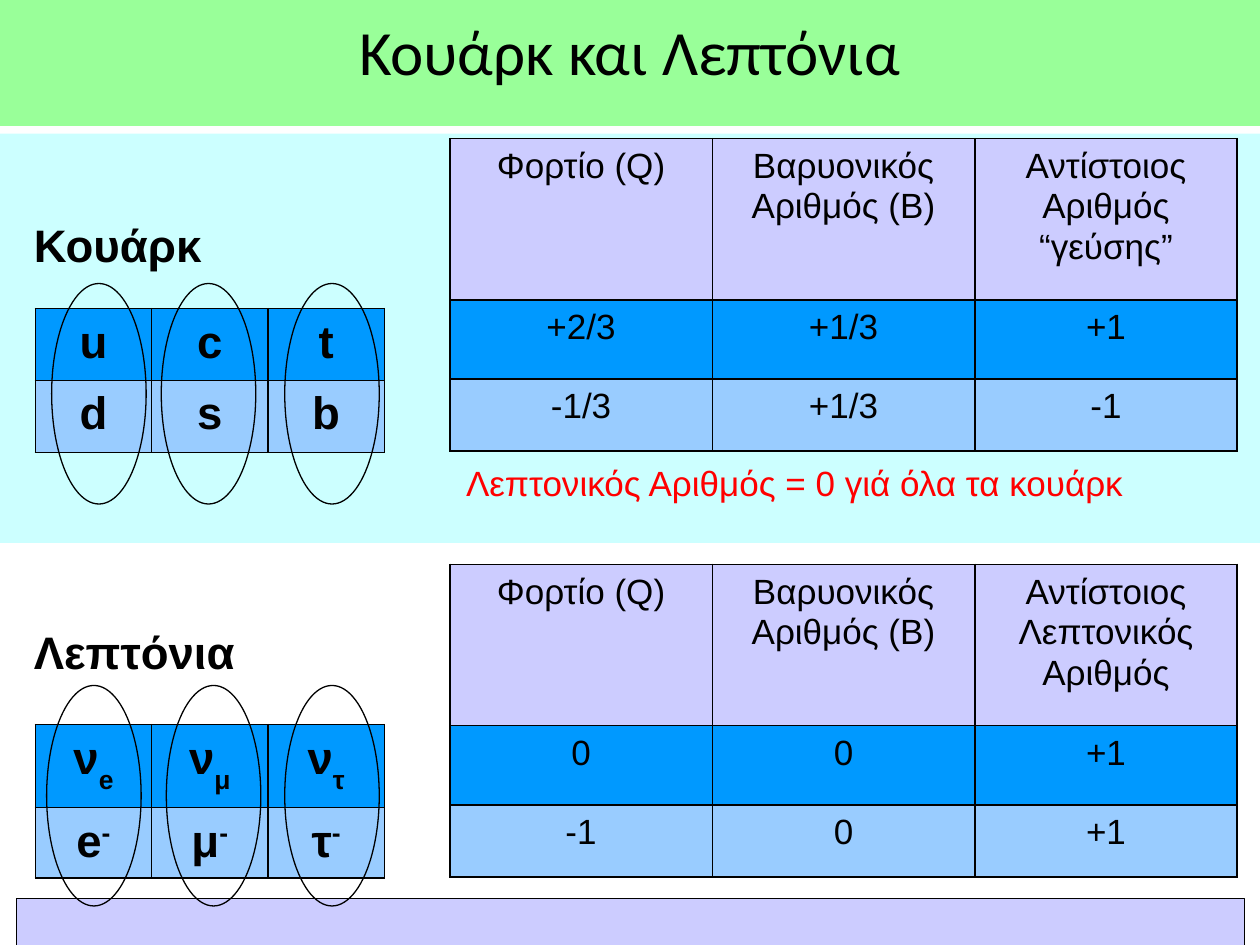
from lxml.etree import SubElement
from pptx import Presentation
from pptx.dml.color import RGBColor
from pptx.enum.shapes import MSO_SHAPE
from pptx.enum.text import MSO_ANCHOR, PP_ALIGN
from pptx.oxml.ns import qn
from pptx.util import Inches, Pt

COLUMNS, ROWS = 100, 75
CELL = Inches(0.1)
BLACK, RED, LILAC, CYAN, GREEN = "000000", "FF0000", "CCCCFF", "CCFFFF", "99FF99"
ROW_FILLS = ["0099FF", "99CCFF"]
SYMBOL = {"name": "Arial", "size": Pt(26), "bold": True}
BODY = {"name": "Arial", "size": Pt(20), "bold": False}
TITLE = {"name": "Calibri", "size": Pt(36), "bold": False}
PROPERTY_HEADS = ["Φορτίο (Q)", "Βαρυονικός Αριθμός (Β)"]

QUARKS = {
    "label": "Κουάρκ", "label_row": 6.1,
    "family": ["uct", "dsb"], "family_row": 13.9, "family_heights": [5.7, 5.7],
    "heads": PROPERTY_HEADS + ["Αντίστοιος Αριθμός “γεύσης”"],
    "values": [["+2/3", "+1/3", "+1"], ["-1/3", "+1/3", "-1"]],
    "ring_row": 11.9, "ring_columns": [4.1, 12.8, 22.6],
}
LEPTONS = {
    "label": "Λεπτόνια", "label_row": 4.6,
    "family": [["νe", "νμ", "ντ"], ["e-", "μ-", "τ-"]],
    "family_row": 13.1, "family_heights": [6.6, 5.6],
    "heads": PROPERTY_HEADS + ["Αντίστοιος Λεπτονικός Αριθμός"],
    "values": [["0", "0", "+1"], ["-1", "0", "+1"]],
    "ring_row": 10, "ring_columns": [3.7, 13.2, 22.6],
}


def color(value):
    """Return the colour for a hex string."""
    return RGBColor.from_string(value)


def grid(*cells):
    """Turn grid columns and rows into lengths."""
    return [int(cell * CELL) for cell in cells]


def add_run(paragraph, text, font_format, fill=BLACK, baseline=0):
    """Add one formatted run, raised or lowered by the baseline share."""
    run = paragraph.add_run()
    run.text = text
    for name, value in font_format.items():
        setattr(run.font, name, value)
    run.font.color.rgb = color(fill)
    if baseline:
        run.font._element.set("baseline", str(baseline))


def add_panel(slide, box, kind=MSO_SHAPE.RECTANGLE, fill=None, line=None):
    """Add a preset shape with an optional fill and thin outline."""
    shape = slide.shapes.add_shape(kind, *grid(*box))
    shape.shadow.inherit = False
    if fill:
        shape.fill.solid()
        shape.fill.fore_color.rgb = color(fill)
    else:
        shape.fill.background()
    if line:
        shape.line.color.rgb = color(line)
        shape.line.width = Pt(0.75)
    else:
        shape.line.fill.background()
    return shape


def add_label(slide, box, text, font_format, fill=BLACK):
    """Add a wrapped, left-aligned line of text."""
    frame = slide.shapes.add_textbox(*grid(*box)).text_frame
    frame.word_wrap = True
    add_run(frame.paragraphs[0], text, font_format, fill)


def add_borders(cell):
    """Draw black lines on the four sides of a cell, ahead of its fill."""
    properties = cell._tc.get_or_add_tcPr()
    for position, side in enumerate(["lnL", "lnR", "lnT", "lnB"]):
        line = SubElement(properties, qn(f"a:{side}"), w=str(Pt(1)))
        fill = SubElement(line, qn("a:solidFill"))
        SubElement(fill, qn("a:srgbClr"), val=BLACK)
        properties.insert(position, line)


def add_grid_table(slide, box, heights, texts, fills, font_format):
    """Add a table of equal columns; a second letter in a symbol is an index."""
    left, top, width = box
    count = len(texts[0])
    frame = slide.shapes.add_table(
        len(texts), count, *grid(left, top, width, sum(heights)))
    table = frame.table
    for column in table.columns:
        column.width = grid(width / count)[0]
    for row, height, row_texts, fill in zip(table.rows, heights, texts, fills):
        row.height = grid(height)[0]
        for cell, text in zip(row.cells, row_texts):
            cell.fill.solid()
            cell.fill.fore_color.rgb = color(fill)
            add_borders(cell)
            paragraph = cell.text_frame.paragraphs[0]
            paragraph.alignment = PP_ALIGN.CENTER
            paragraph.line_spacing = 1.04
            if font_format is SYMBOL and len(text) == 2:
                add_run(paragraph, text[0], font_format)
                shift = 33000 if text[1] == "-" else -33000
                add_run(paragraph, text[1], font_format, baseline=shift)
            else:
                add_run(paragraph, text, font_format)


def add_title(slide, box):
    """Add the title band with its centred heading."""
    shape = add_panel(slide, box, fill=GREEN)
    frame = shape.text_frame
    layout = {"margin_top": 0, "margin_bottom": Inches(0.2),
              "vertical_anchor": MSO_ANCHOR.MIDDLE}
    for name, value in layout.items():
        setattr(frame, name, value)
    paragraph = frame.paragraphs[0]
    paragraph.alignment = PP_ALIGN.CENTER
    add_run(paragraph, "Κουάρκ και Λεπτόνια", TITLE)


def add_particles(slide, top, particles):
    """Add a particle family, its property table and generation rings."""
    add_grid_table(slide, (2.8, top + particles["family_row"], 27.7),
                   particles["family_heights"], particles["family"],
                   ROW_FILLS, SYMBOL)
    add_label(slide, (1.7, top + particles["label_row"], 23.5, 5.3),
              particles["label"], SYMBOL)
    add_grid_table(slide, (35.7, top + 0.4, 62.5), [12.8, 6.3, 5.7],
                   [particles["heads"]] + particles["values"],
                   [LILAC] + ROW_FILLS, BODY)
    for column in particles["ring_columns"]:
        add_panel(slide, (column, top + particles["ring_row"], 7.5, 17.5),
                  MSO_SHAPE.OVAL, line=BLACK)


def main():
    """Build and save the slide."""
    presentation = Presentation()
    presentation.slide_width, presentation.slide_height = grid(COLUMNS, ROWS)
    slide = presentation.slides.add_slide(presentation.slide_layouts[6])
    add_panel(slide, (1.3, 71.3, 97.5, 5.4), fill=LILAC, line=BLACK)
    add_panel(slide, (0, 10.6, COLUMNS, 32.5), fill=CYAN)
    add_title(slide, (0, 0, COLUMNS, 10))
    add_particles(slide, 10.6, QUARKS)
    add_label(slide, (36, 36.1, 62.5, 4.3),
              "Λεπτονικός Αριθμός = 0 γιά όλα τα κουάρκ", BODY, RED)
    add_particles(slide, 44.4, LEPTONS)
    presentation.save("out.pptx")


if __name__ == "__main__":
    main()
